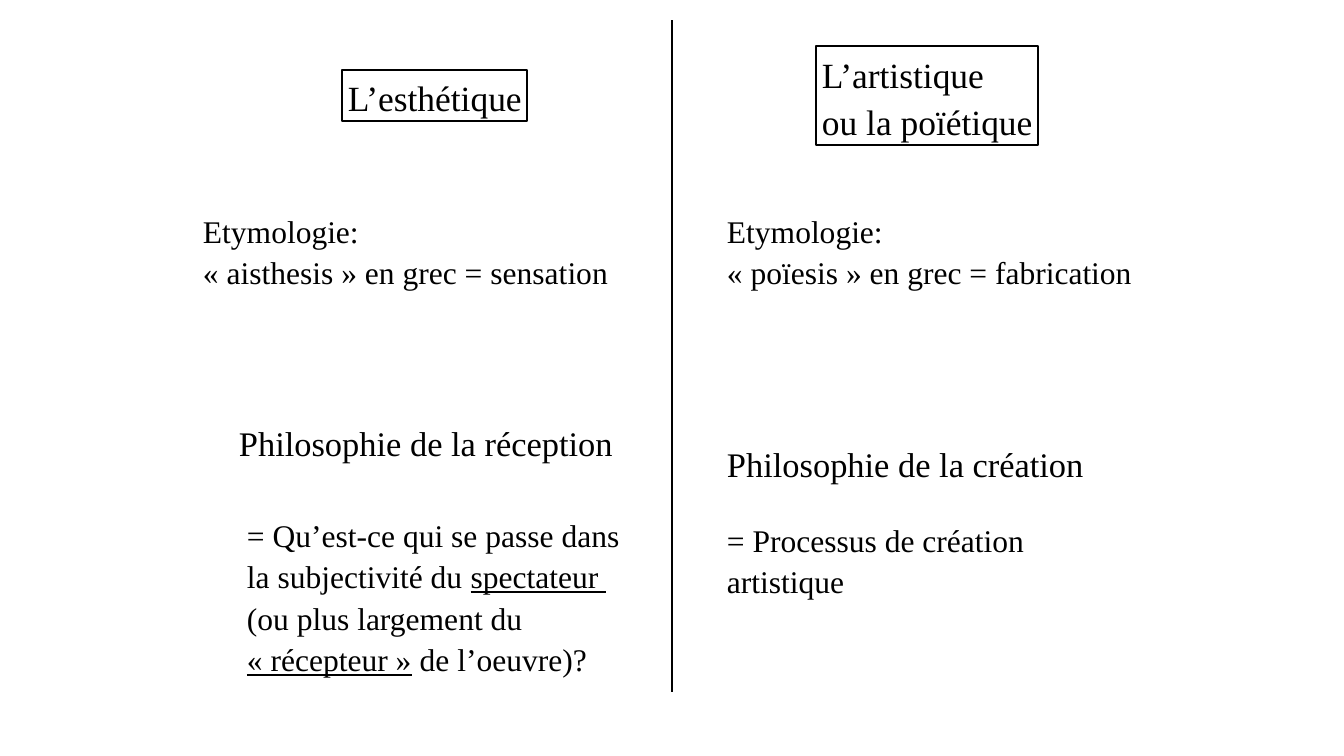
from pptx import Presentation
from pptx import util as u
from pptx.dml.color import RGBColor
from pptx.enum import shapes, text
from pptx.oxml import parse_xml
from pptx.oxml.ns import nsdecls

WIDE, HIGH = 1344, 756
COLORS = {"ink": "000000", "page": "FFFFFF"}
FONT = "Times New Roman"
TITLE, HEAD, BODY = 25.3, 24.6, 22.5

LEFT = {
    "title": ((342, 70, 185, 51), ["L’esthétique"]),
    "origin": ((197, 205, 418, 89),
               ["Etymologie:", "«\u00a0aisthesis\u00a0» en grec = sensation"]),
    "field": ((233, 416, 387, 50), ["Philosophie de la réception"]),
    "sense": ((241, 509, 385, 172),
              ["= Qu’est-ce qui se passe dans",
               "la subjectivité du _spectateur _",
               "(ou plus largement du",
               "_«\u00a0récepteur\u00a0»_ de l’oeuvre)?"]),
}
RIGHT = {
    "title": ((144, 46, 222, 99), ["L’artistique", "ou la poïétique"]),
    "origin": ((49, 205, 418, 89),
               ["Etymologie:", "«\u00a0poïesis\u00a0» en grec = fabrication"]),
    "field": ((49, 437, 370, 50), ["Philosophie de la création"]),
    "sense": ((49, 514, 309, 89), ["= Processus de création", "artistique"]),
}


def px(n):
    return u.Emu(round(n * 914400 / 100.8))


def color(name):
    return RGBColor.from_string(COLORS[name])


def write(slide, box, lines, size=BODY, framed=False):
    """Place lines of text; underscores enclose underlined words."""
    place = [px(n) for n in box]
    if framed:
        shape = slide.shapes.add_shape(shapes.MSO_SHAPE.RECTANGLE, *place)
        shape.shadow.inherit = False
        shape.fill.background()
        shape.line.color.rgb = color("ink")
        shape.line.width = u.Pt(2)
    else:
        shape = slide.shapes.add_textbox(*place)
    frame = shape.text_frame
    frame.word_wrap = False
    frame.auto_size = text.MSO_AUTO_SIZE.SHAPE_TO_FIT_TEXT
    frame.vertical_anchor = text.MSO_ANCHOR.MIDDLE
    frame.margin_left = frame.margin_right = px(4)
    frame.margin_top = frame.margin_bottom = px(4)
    for i, line in enumerate(lines):
        para = frame.add_paragraph() if i else frame.paragraphs[0]
        para.alignment = text.PP_ALIGN.LEFT
        para.line_spacing = 1.1
        para._p.get_or_add_pPr().set("indent", str(px(2)))
        for j, part in enumerate(line.split("_")):
            if not part:
                continue
            run = para.add_run()
            run.text = part
            run.font.name = FONT
            run.font.size = u.Pt(size)
            run.font.color.rgb = color("ink")
            if j % 2:
                run.font.underline = True


def column(slide, x, y, parts):
    sizes = {"title": TITLE, "field": HEAD}
    for name, (box, lines) in parts.items():
        left, top, wide, high = box
        write(slide, (x + left, y + top, wide, high), lines,
              size=sizes.get(name, BODY), framed=name == "title")


def divide(slide, x, top, end):
    line = slide.shapes.add_connector(
        shapes.MSO_CONNECTOR.STRAIGHT, px(x), px(end), px(x), px(top))
    line.line.color.rgb = color("ink")
    line.line.width = u.Pt(2)
    line._element.spPr.append(parse_xml(f"<a:effectLst {nsdecls('a')}/>"))


def main():
    deck = Presentation()
    deck.slide_width, deck.slide_height = px(WIDE), px(HIGH)
    slide = deck.slides.add_slide(deck.slide_layouts[6])
    slide.background.fill.solid()
    slide.background.fill.fore_color.rgb = color("page")
    divide(slide, WIDE // 2, 20, 692)
    column(slide, 0, 0, LEFT)
    column(slide, WIDE // 2, 0, RIGHT)
    deck.save("out.pptx")


if __name__ == "__main__":
    main()
